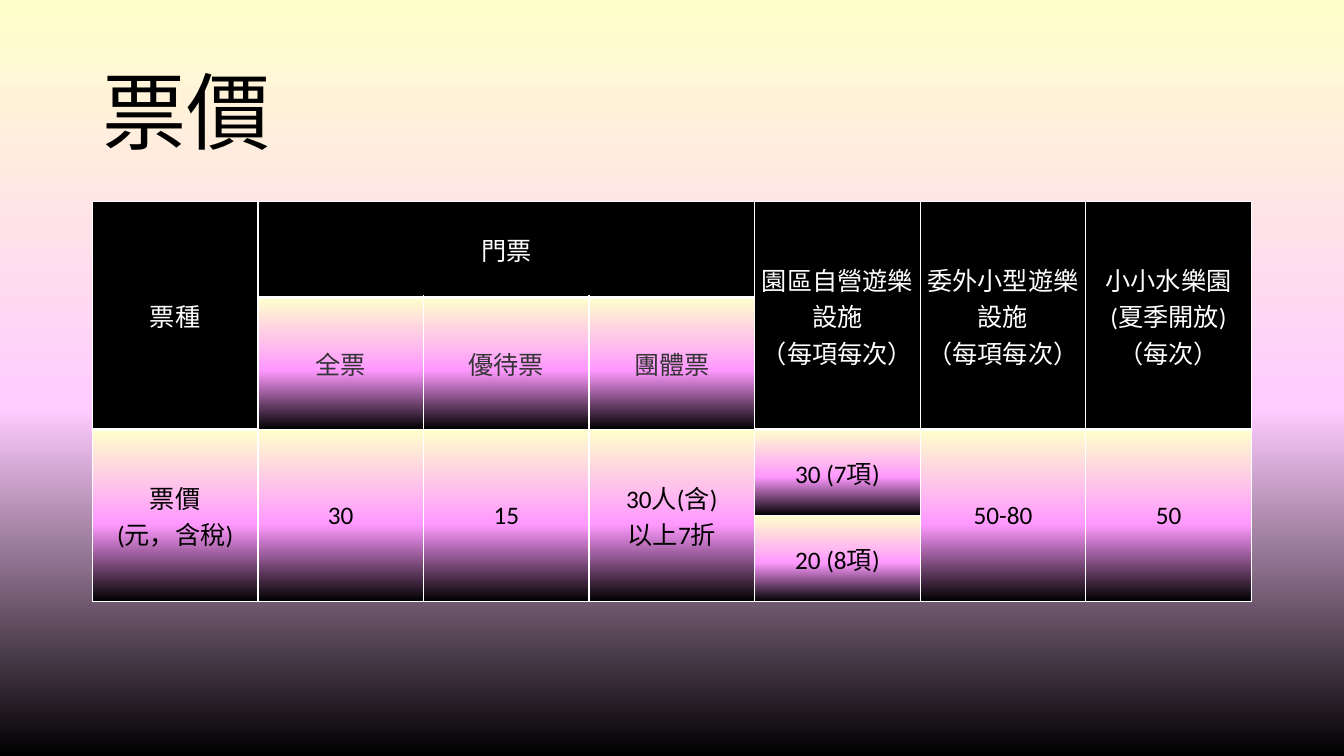
from lxml import etree
from pptx import Presentation
from pptx.dml.color import RGBColor
from pptx.enum.text import MSO_ANCHOR as Anchor, MSO_AUTO_SIZE as AutoSize, PP_ALIGN as Align
from pptx.oxml.ns import qn
from pptx.util import Pt

CJK_FONT = "Noto Sans CJK JP"
BLACK, WHITE, GREY = "000000", "FFFFFF", "343434"
SLIDE_STOPS = [(0, "FFFFCC"), (54, "FFCCFF"), (100, BLACK)]
CELL_STOPS = [(0, "FFFFCC"), (55, "FF99FF"), (100, BLACK)]
ROW_HEIGHTS = [68.4, 94.4, 61.4, 61.4]
COLUMN_COUNT = 7

# row, column, rows spanned, columns spanned, wording
HEADERS = [
    (0, 0, 2, 1, "票種"),
    (0, 1, 1, 3, "門票"),
    (0, 4, 2, 1, "園區自營遊樂設施\n（每項每次）"),
    (0, 5, 2, 1, "委外小型遊樂設施\n（每項每次）"),
    (0, 6, 2, 1, "小小水樂園\n(夏季開放)\n（每次）"),
]
TICKET_KINDS = [
    (1, 1, 1, 1, "全票"),
    (1, 2, 1, 1, "優待票"),
    (1, 3, 1, 1, "團體票"),
]
PRICES = [
    (2, 0, 2, 1, "票價\n(元，含稅)"),
    (2, 1, 2, 1, "30"),
    (2, 2, 2, 1, "15"),
    (2, 3, 2, 1, "30人(含)\n以上7折"),
    (2, 4, 1, 1, "30 (7項)"),
    (3, 4, 1, 1, "20 (8項)"),
    (2, 5, 2, 1, "50-80"),
    (2, 6, 2, 1, "50"),
]


def color(hex_code):
    return RGBColor.from_string(hex_code)


def paint_gradient(fill, owner, stops):
    """Fill from top to bottom; owner is the XML element that holds the fill."""
    fill.gradient()
    fill.gradient_angle = 270
    stop_list = next(owner.iter(qn("a:gsLst")))
    for default_stop in list(stop_list):
        stop_list.remove(default_stop)
    for percent, hex_code in stops:
        stop = etree.SubElement(stop_list, qn("a:gs"), pos=str(percent * 1000))
        etree.SubElement(stop, qn("a:srgbClr"), val=hex_code)


def add_run(paragraph, wording, size, latin, hex_code):
    run = paragraph.add_run()
    run.text = wording
    font = run.font
    font.size, font.name, font.bold = Pt(size), latin, False
    font.color.rgb = color(hex_code)
    east_asian = etree.Element(qn("a:ea"), typeface=CJK_FONT)
    font._element.find(qn("a:latin")).addnext(east_asian)


def add_borders(cell, bottom_width):
    properties = cell._tc.get_or_add_tcPr()
    widths = {"lnL": 1, "lnR": 1, "lnT": 1, "lnB": bottom_width}
    for side, width in widths.items():
        border = etree.SubElement(properties, qn(f"a:{side}"), w=str(Pt(width)))
        solid = etree.SubElement(border, qn("a:solidFill"))
        etree.SubElement(solid, qn("a:srgbClr"), val=WHITE)


def place_title(slide, left, top, width, height):
    title = slide.shapes.title
    title.left, title.top, title.width, title.height = map(Pt, (left, top, width, height))
    frame = title.text_frame
    frame.auto_size = AutoSize.NONE
    frame.vertical_anchor = Anchor.MIDDLE
    heading = frame.paragraphs[0]
    heading.alignment = Align.LEFT
    heading.line_spacing = 0.9
    add_run(heading, "票價", 60, CJK_FONT, BLACK)


def fill_cells(table, entries, text_color, is_header=False):
    for row, column, row_span, column_span, wording in entries:
        cell = table.cell(row, column)
        if row_span * column_span > 1:
            cell.merge(table.cell(row + row_span - 1, column + column_span - 1))
        cell.vertical_anchor = Anchor.MIDDLE
        cell.margin_left = cell.margin_right = Pt(2.2)
        cell.margin_top = cell.margin_bottom = Pt(2.2)
        add_borders(cell, 3 if is_header else 1)
        if is_header:
            cell.fill.solid()
            cell.fill.fore_color.rgb = color(BLACK)
        else:
            paint_gradient(cell.fill, cell._tc, CELL_STOPS)
        paragraph = cell.text_frame.paragraphs[0]
        paragraph.alignment = Align.CENTER
        for index, line in enumerate(wording.split("\n")):
            if index:
                paragraph.add_line_break()
            add_run(paragraph, line, 18, "Calibri", text_color)


def add_price_table(slide, left, top, width):
    frame = slide.shapes.add_table(
        len(ROW_HEIGHTS), COLUMN_COUNT, Pt(left), Pt(top), Pt(width), Pt(sum(ROW_HEIGHTS)))
    table = frame.table
    table.first_row = table.horz_banding = False
    for column in table.columns:
        column.width = Pt(width / COLUMN_COUNT)
    for row, height in zip(table.rows, ROW_HEIGHTS):
        row.height = Pt(height)
    fill_cells(table, HEADERS, WHITE, is_header=True)
    fill_cells(table, TICKET_KINDS, GREY)
    fill_cells(table, PRICES, BLACK)


def main():
    deck = Presentation()
    deck.slide_width, deck.slide_height = Pt(960), Pt(540)
    slide = deck.slides.add_slide(deck.slide_layouts[5])
    paint_gradient(slide.background.fill, slide._element, SLIDE_STOPS)
    place_title(slide, 66, 31, 828, 104.4)
    add_price_table(slide, 66, 144, 828)
    deck.save("out.pptx")


if __name__ == "__main__":
    main()
